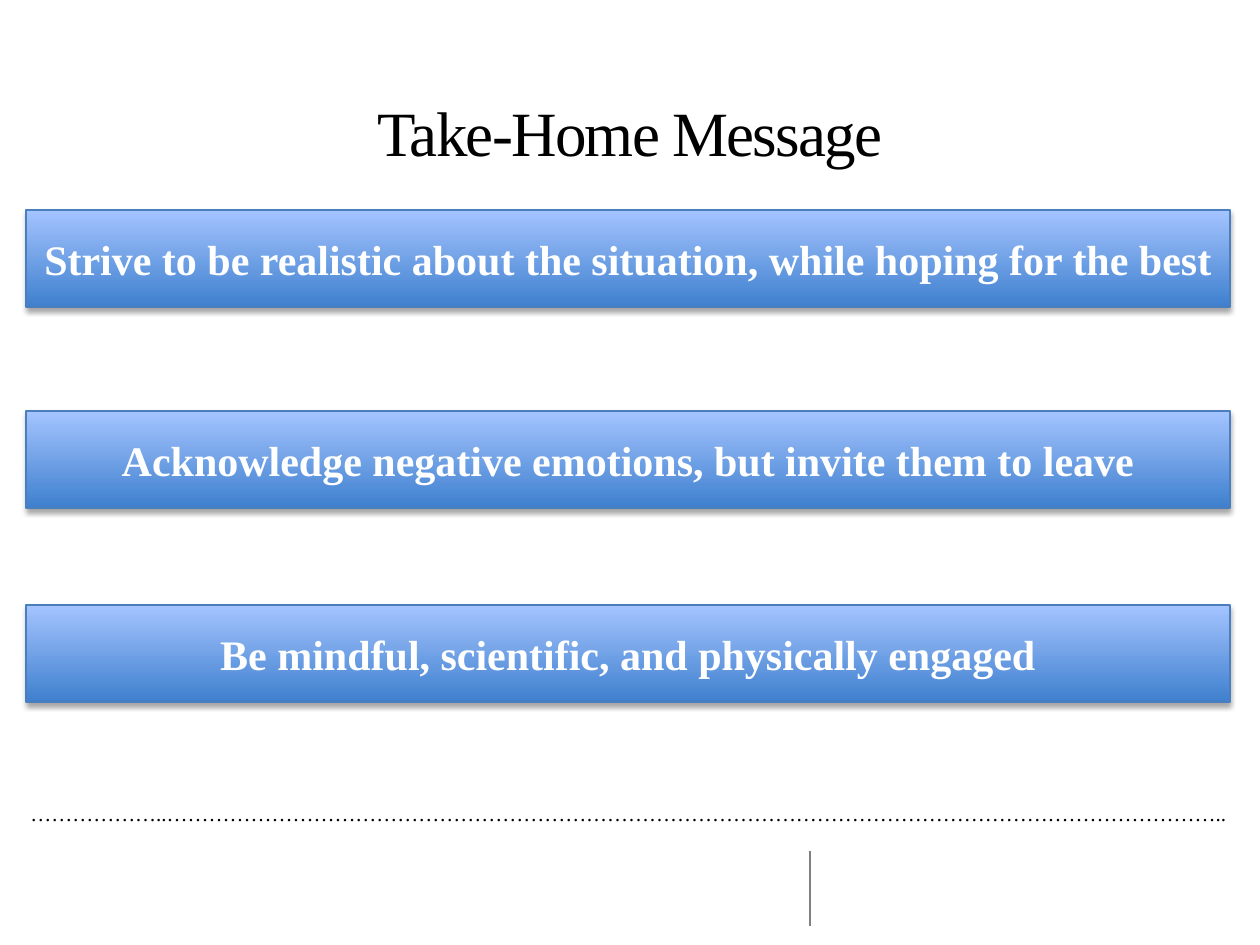
"""Build the Take-Home Message slide."""
import pptx
import pptx.dml.color
import pptx.enum.shapes
import pptx.enum.text
import pptx.oxml
import pptx.util

RGB = pptx.dml.color.RGBColor
BLACK = RGB(0x00, 0x00, 0x00)
WHITE = RGB(0xFF, 0xFF, 0xFF)
GRAY = RGB(0x80, 0x80, 0x80)
DEEP = RGB(0x3F, 0x80, 0xCE)
PALE = RGB(0xA4, 0xC4, 0xFF)
EDGE = RGB(0x4B, 0x7E, 0xBC)
CENTER = pptx.enum.text.PP_ALIGN.CENTER
MIDDLE = pptx.enum.text.MSO_ANCHOR.MIDDLE
SPACE = 'xmlns:a="http://schemas.openxmlformats.org/drawingml/2006/main"'


def px(count):
    return pptx.util.Emu(round(count * 914400 / 126))


def write(shape, text, size, color, bold=False):
    frame = shape.text_frame
    frame.word_wrap = True
    frame.text = text
    font = frame.paragraphs[0].runs[0].font
    font.name = "Times New Roman"
    font.size = pptx.util.Pt(size)
    font.bold = bold
    font.color.rgb = color
    return frame


deck = pptx.Presentation()
deck.slide_width, deck.slide_height = px(1260), px(945)
slide = deck.slides.add_slide(deck.slide_layouts[6])
shapes = slide.shapes

dots = shapes.add_textbox(px(18), px(794), px(1225), px(38))
frame = write(dots, "………………..……………………………………………………………………………………………………………………………………..", 12, BLACK)
frame.auto_size = pptx.enum.text.MSO_AUTO_SIZE.SHAPE_TO_FIT_TEXT

rule = shapes.add_connector(
    pptx.enum.shapes.MSO_CONNECTOR.STRAIGHT, px(810), px(851), px(810), px(926))
rule.line.color.rgb = GRAY
rule.line.width = pptx.util.Pt(1)
rule._element.spPr.append(pptx.oxml.parse_xml(f"<a:effectLst {SPACE}/>"))

title = shapes.add_textbox(px(63), px(38), px(1134), px(157))
frame = write(title, "Take-Home Message", 36, BLACK)
frame.vertical_anchor = MIDDLE
line = frame.paragraphs[0]
line.alignment = CENTER
line.line_spacing = pptx.util.Pt(60)
line.runs[0].font._element.set("spc", "-100")

bars = [
    (210, "Strive to be realistic about the situation, while hoping for the best"),
    (411, "Acknowledge negative emotions, but invite them to leave"),
    (605, "Be mindful, scientific, and physically engaged"),
]
for top, text in bars:
    bar = shapes.add_shape(
        pptx.enum.shapes.MSO_SHAPE.RECTANGLE, px(26), px(top), px(1204), px(97))
    bar.fill.gradient()
    bar.fill.gradient_angle = 90
    for stop, color, place in zip(bar.fill.gradient_stops, (DEEP, PALE), (0, 1)):
        stop.color.rgb = color
        stop.position = place
    bar.line.color.rgb = EDGE
    bar.line.width = pptx.util.Pt(0.75)
    bar.shadow.inherit = False
    glow = pptx.oxml.parse_xml(
        f'<a:outerShdw {SPACE} blurRad="39370" dist="22860" dir="5400000" rotWithShape="0">'
        '<a:srgbClr val="000000"><a:alpha val="35000"/></a:srgbClr></a:outerShdw>')
    bar._element.spPr.find(pptx.oxml.ns.qn("a:effectLst")).append(glow)
    frame = write(bar, text, 24, WHITE, True)
    frame.vertical_anchor = MIDDLE
    frame.paragraphs[0].alignment = CENTER

deck.save("out.pptx")
